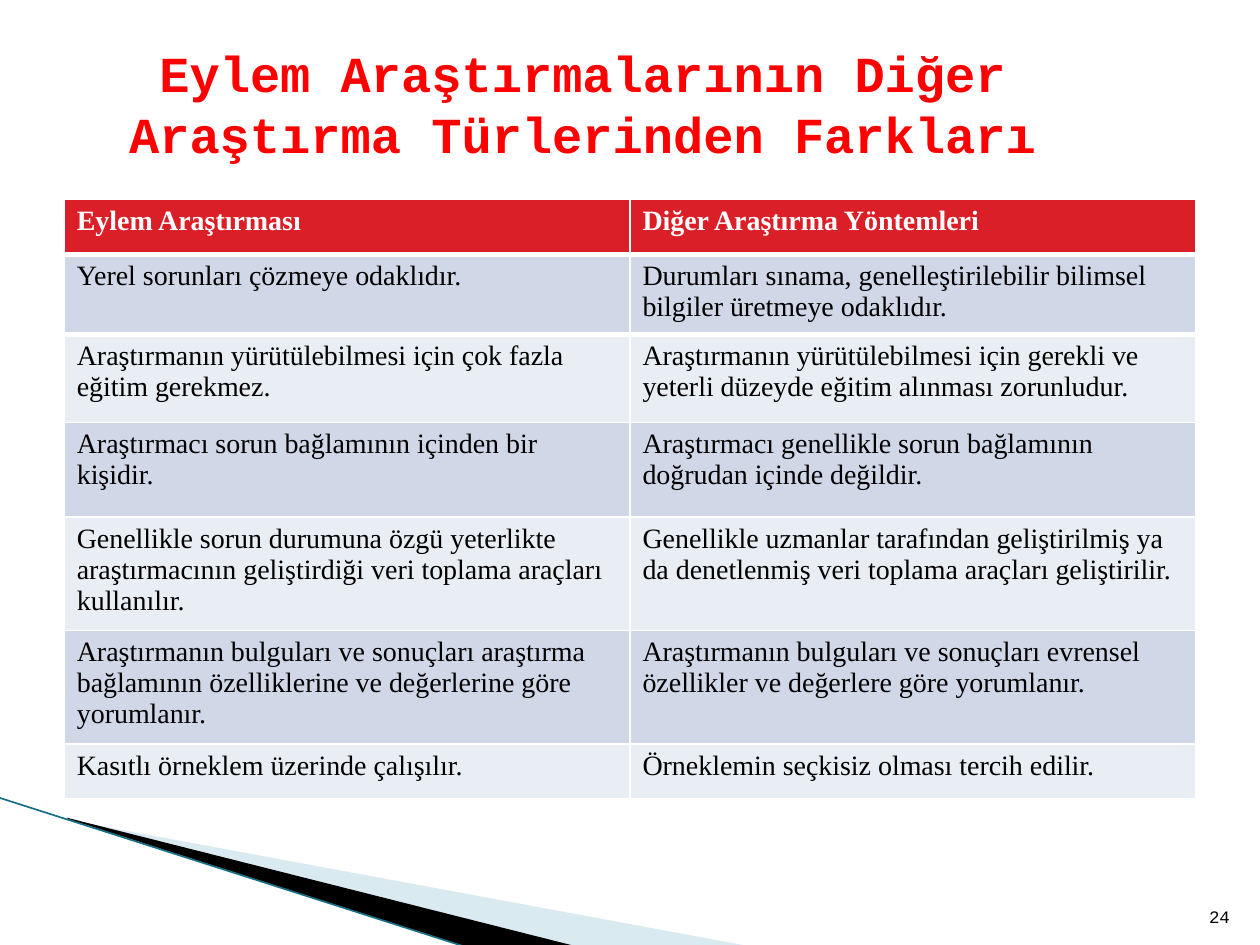
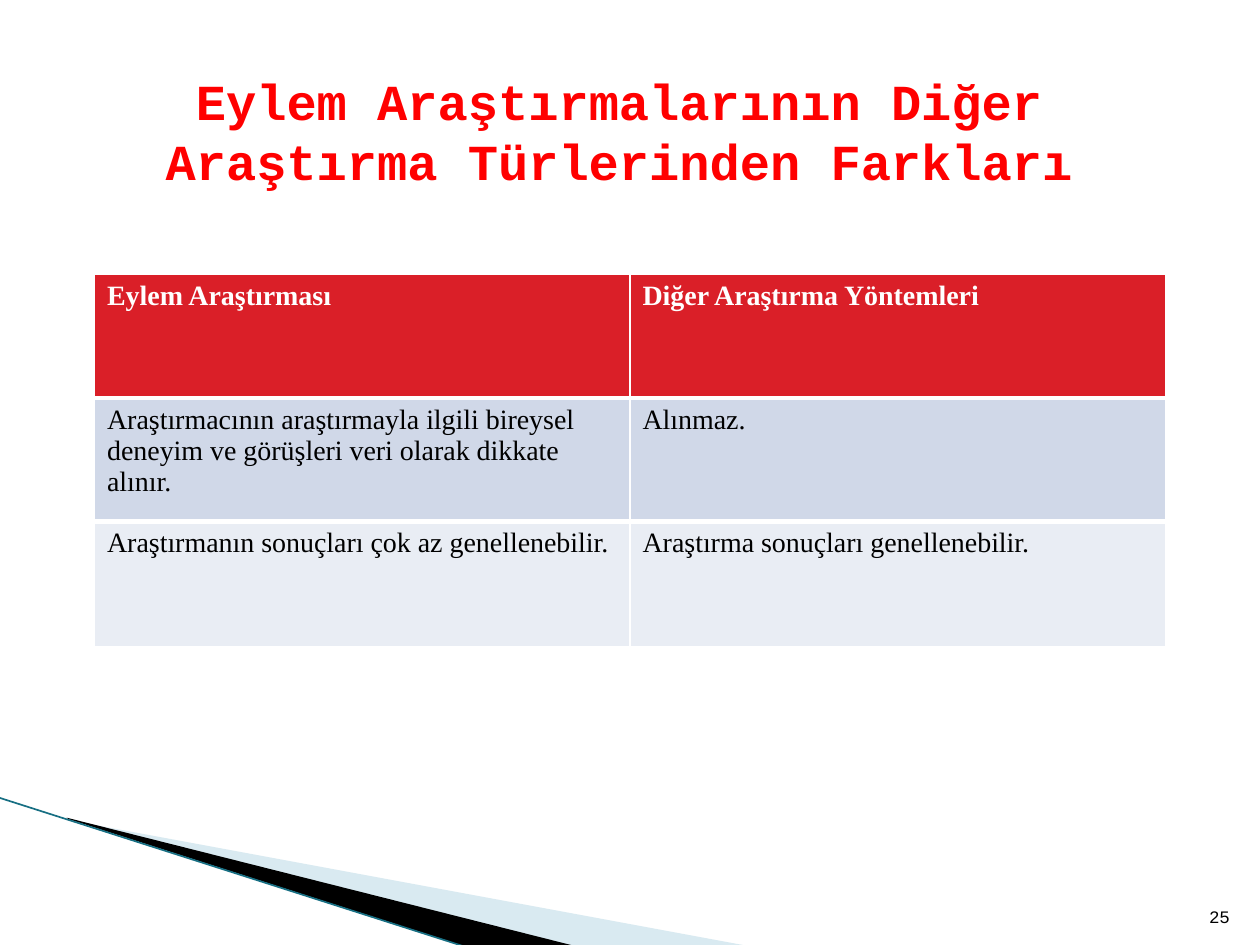
from lxml import etree
from pptx import Presentation
from pptx import util as u
from pptx.dml.color import RGBColor
from pptx.enum import shapes, text
from pptx.oxml.ns import qn

TITLE = "Eylem Araştırmalarının Diğer Araştırma Türlerinden Farkları"
HEADER = ("Eylem Araştırması", "Diğer Araştırma Yöntemleri")

SLIDES = [
    {
        "number": 24,
        "title_box": (0, 0.5, 9.25, 0.63),
        "table_top": 1.58,
        "table_width": 8.98,
        "row_heights": (0.44, 0.58, 0.7, 0.75, 0.9, 0.87, 0.44),
        "rows": [
            ("Yerel sorunları çözmeye odaklıdır.",
             "Durumları sınama, genelleştirilebilir bilimsel bilgiler üretmeye odaklıdır."),
            ("Araştırmanın yürütülebilmesi için çok fazla eğitim gerekmez.",
             "Araştırmanın yürütülebilmesi için gerekli ve yeterli düzeyde eğitim alınması zorunludur."),
            ("Araştırmacı sorun bağlamının içinden bir kişidir.",
             "Araştırmacı genellikle sorun bağlamının doğrudan içinde değildir."),
            ("Genellikle sorun durumuna özgü yeterlikte araştırmacının geliştirdiği veri toplama araçları kullanılır.",
             "Genellikle uzmanlar tarafından geliştirilmiş ya da denetlenmiş veri toplama araçları geliştirilir."),
            ("Araştırmanın bulguları ve sonuçları araştırma bağlamının özelliklerine ve değerlerine göre yorumlanır.",
             "Araştırmanın bulguları ve sonuçları evrensel özellikler ve değerlere göre yorumlanır."),
            ("Kasıtlı örneklem üzerinde çalışılır.",
             "Örneklemin seçkisiz olması tercih edilir."),
        ],
    },
    {
        "number": 25,
        "title_box": (0.83, 0.52, 8.17, 1.03),
        "table_top": 2.18,
        "table_width": 8.5,
        "row_heights": (0.98, 0.98, 0.99),
        "rows": [
            ("Araştırmacının araştırmayla ilgili bireysel deneyim ve görüşleri veri olarak dikkate alınır.",
             "Alınmaz."),
            ("Araştırmanın sonuçları çok az genellenebilir.",
             "Araştırma sonuçları genellenebilir."),
        ],
    },
]

SLIDE_WIDTH, SLIDE_HEIGHT = 10, 7.5
TITLE_FONT, TABLE_FONT = "Courier New", "Times New Roman"
RED, HEADER_RED, BLACK, WHITE = "FF0000", "DA1F28", "000000", "FFFFFF"
BAND_FILLS = ("D0D8E8", "E9EDF4")
HEADER_RULE = 3
WEDGES = [  # fill, opacity in percent, corners
    ("A0CBDC", 40, [(0.55, 6.51), (5.95, 7.51), (4.56, 7.51), (0.55, 6.5)]),
    (BLACK, 100, [(0.53, 6.49), (4.57, 7.51), (3.72, 7.52), (0.54, 6.5)]),
]
EDGE_COLOR, EDGE_ENDS = "176F83", (-0.01, 6.33, 3.71, 7.52)


def color(value):
    return RGBColor.from_string(value)


def inches(values):
    return [u.Inches(value) for value in values]


def style(font, name, size, hex_color, bold=False):
    font.name = name
    font.size = u.Pt(size)
    font.bold = bold
    font.color.rgb = color(hex_color)


def add_corner(slide, layout):
    """Draw the corner wedges and their edge, then hand them to the layout."""
    parts = []
    for fill, opacity, corners in WEDGES:
        points = [inches(corner) for corner in corners]
        builder = slide.shapes.build_freeform(*points[0])
        builder.add_line_segments(points[1:], close=True)
        wedge = builder.convert_to_shape()
        wedge.shadow.inherit = False
        wedge.fill.solid()
        wedge.fill.fore_color.rgb = color(fill)
        wedge.line.fill.background()
        if opacity < 100:
            fill_color = wedge.element.spPr.find(qn("a:solidFill"))[0]
            etree.SubElement(fill_color, qn("a:alpha"), val=str(opacity * 1000))
        parts.append(wedge)
    edge = slide.shapes.add_connector(shapes.MSO_CONNECTOR.STRAIGHT, *inches(EDGE_ENDS))
    edge.line.color.rgb = color(EDGE_COLOR)
    edge.line.width = u.Pt(0.95)
    etree.SubElement(edge.element.spPr, qn("a:effectLst"))
    for part in parts + [edge]:
        layout.shapes.element.append(part.element)


def add_title(slide, box):
    title = slide.shapes.title
    title.left, title.top, title.width, title.height = inches(box)
    frame = title.text_frame
    frame.text = TITLE
    frame.word_wrap = True
    frame.auto_size = text.MSO_AUTO_SIZE.NONE
    frame.vertical_anchor = text.MSO_ANCHOR.MIDDLE
    paragraph = frame.paragraphs[0]
    paragraph.alignment = text.PP_ALIGN.CENTER
    style(paragraph.font, TITLE_FONT, 28.8, RED, True)


def add_number(slide, number):
    frame = slide.shapes.add_textbox(*inches((9.46, 7.01, 0.4, 0.4))).text_frame
    frame.text = str(number)
    frame.word_wrap = True
    frame.vertical_anchor = text.MSO_ANCHOR.BOTTOM
    paragraph = frame.paragraphs[0]
    paragraph.alignment = text.PP_ALIGN.RIGHT
    style(paragraph.font, TITLE_FONT, 10, BLACK)


def add_rule(cell, side):
    """Draw the white header rule on one side (lnT or lnB) of a cell."""
    line = etree.Element(qn(f"a:{side}"), w=str(u.Pt(HEADER_RULE)))
    fill = etree.SubElement(line, qn("a:solidFill"))
    etree.SubElement(fill, qn("a:srgbClr"), val=WHITE)
    cell.fill.solid()
    cell._tc.tcPr.insert(0, line)


def add_comparison(slide, content):
    """Add the two-column table, centred across the slide."""
    rows = [HEADER] + content["rows"]
    heights, width = content["row_heights"], content["table_width"]
    box = ((SLIDE_WIDTH - width) / 2, content["table_top"], width, sum(heights))
    table = slide.shapes.add_table(len(rows), len(HEADER), *inches(box)).table
    for index, (row, height) in enumerate(zip(rows, heights)):
        is_header = index == 0
        table.rows[index].height = u.Inches(height)
        for cell, words in zip(table.rows[index].cells, row):
            cell.text = words
            cell.fill.solid()
            cell.fill.fore_color.rgb = color(HEADER_RED if is_header else BAND_FILLS[(index - 1) % 2])
            # Run fonts keep the row height tied to the text size.
            style(cell.text_frame.paragraphs[0].runs[0].font, TABLE_FONT, 16,
                  WHITE if is_header else BLACK, is_header)
            if index < 2:
                add_rule(cell, "lnB" if is_header else "lnT")


def main():
    presentation = Presentation()
    presentation.slide_width, presentation.slide_height = inches((SLIDE_WIDTH, SLIDE_HEIGHT))
    layout = presentation.slide_layouts.get_by_name("Title Only")
    for index, content in enumerate(SLIDES):
        slide = presentation.slides.add_slide(layout)
        if index == 0:
            add_corner(slide, layout)
        add_number(slide, content["number"])
        add_title(slide, content["title_box"])
        add_comparison(slide, content)
    presentation.save("out.pptx")


if __name__ == "__main__":
    main()
